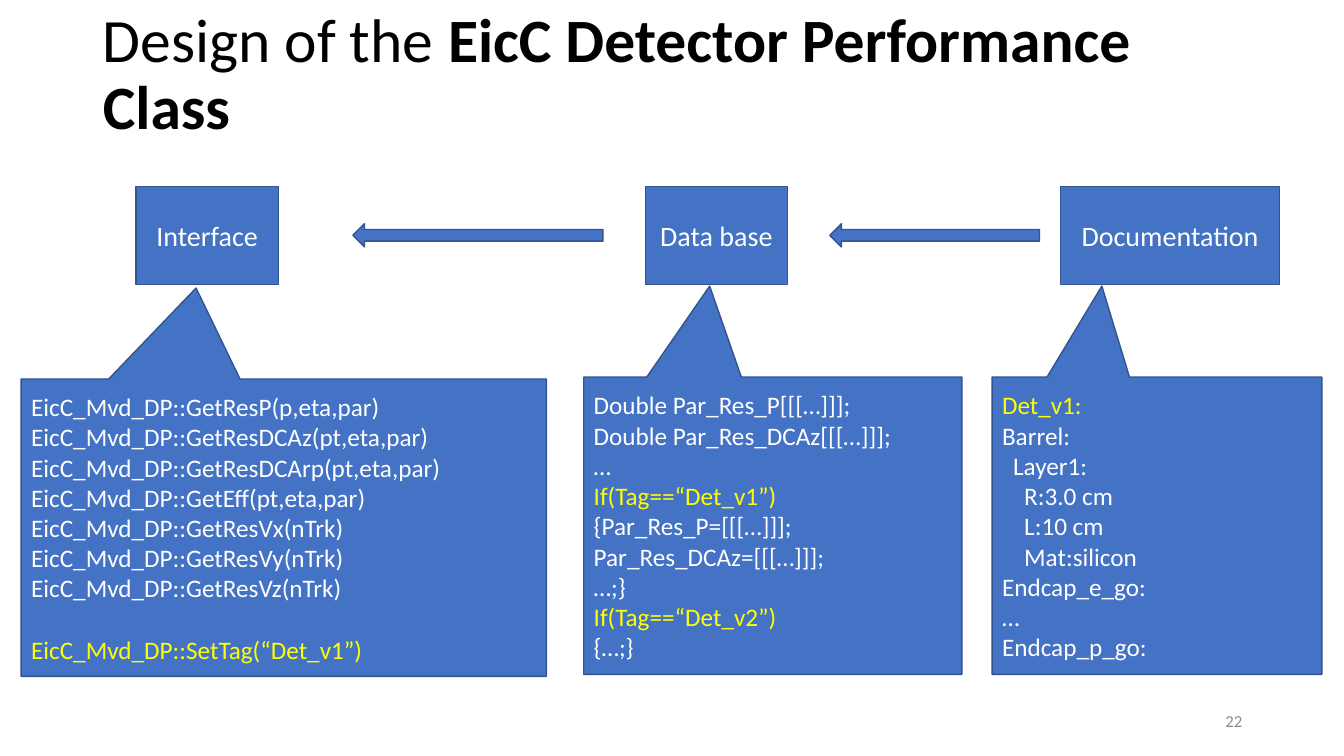
from pptx import Presentation
from pptx.dml.color import RGBColor
from pptx.enum.shapes import MSO_SHAPE
from pptx.enum.text import MSO_ANCHOR, MSO_AUTO_SIZE, PP_ALIGN
from pptx.util import Inches, Pt

BLUE = RGBColor(0x44, 0x72, 0xC4)
EDGE = RGBColor(0x32, 0x54, 0x91)
WHITE = RGBColor(0xFF, 0xFF, 0xFF)
YELLOW = RGBColor(0xFF, 0xFF, 0x00)
BLACK = RGBColor(0x00, 0x00, 0x00)
GRAY = RGBColor(0x8C, 0x8C, 0x8C)
FONT = "Calibri"
INDENT = 0.11

INTERFACE = [
    "EicC_Mvd_DP::GetResP(p,eta,par)",
    "EicC_Mvd_DP::GetResDCAz(pt,eta,par)",
    "EicC_Mvd_DP::GetResDCArp(pt,eta,par)",
    "EicC_Mvd_DP::GetEff(pt,eta,par)",
    "EicC_Mvd_DP::GetResVx(nTrk)",
    "EicC_Mvd_DP::GetResVy(nTrk)",
    "EicC_Mvd_DP::GetResVz(nTrk)",
    "EicC_Mvd_DP::SetTag(“Det_v1”)",
]
DATA_BASE = [
    "Double Par_Res_P[[[…]]];",
    "Double Par_Res_DCAz[[[…]]];",
    "…",
    "If(Tag==“Det_v1”)",
    "{Par_Res_P=[[[…]]];",
    "Par_Res_DCAz=[[[…]]];",
    "…;}",
    "If(Tag==“Det_v2”)",
    "{…;}",
]
DOCUMENTATION = [
    "Det_v1:",
    "Barrel:",
    "Layer1:",
    "R:3.0 cm",
    "L:10 cm",
    "Mat:silicon",
    "Endcap_e_go:",
    "…",
    "Endcap_p_go:",
]
LEVELS = {"Layer1:": 1, "R:3.0 cm": 2, "L:10 cm": 2, "Mat:silicon": 2}


def style_font(font, size, color):
    """Apply the slide font with a size and colour."""
    font.name, font.size = FONT, Pt(size)
    font.color.rgb = color


def add_block(s, kind, x, y, w, h):
    """Add a blue outlined shape without shadow."""
    sp = s.shapes.add_shape(kind, Inches(x), Inches(y), Inches(w), Inches(h))
    sp.shadow.inherit = False
    sp.fill.solid()
    sp.fill.fore_color.rgb = BLUE
    sp.line.color.rgb = EDGE
    sp.line.width = Pt(1)
    return sp


def add_title(s, x, y, w, h):
    """Place the title with its class name in bold."""
    sp = s.shapes.title
    sp.left, sp.top, sp.width, sp.height = map(Inches, (x, y, w, h))
    tf = sp.text_frame
    tf.auto_size = MSO_AUTO_SIZE.NONE
    tf.vertical_anchor = MSO_ANCHOR.MIDDLE
    p = tf.paragraphs[0]
    p.alignment = PP_ALIGN.LEFT
    p.line_spacing = 0.9
    style_font(p.font, 44, BLACK)
    p.add_run().text = "Design of the "
    r = p.add_run()
    r.text = "EicC Detector Performance Class"
    r.font.bold = True


def add_process(s, name, x, y, w, h):
    """Add a process box with a centred name."""
    tf = add_block(s, MSO_SHAPE.FLOWCHART_PROCESS, x, y, w, h).text_frame
    tf.vertical_anchor = MSO_ANCHOR.MIDDLE
    p = tf.paragraphs[0]
    p.text = name
    p.alignment = PP_ALIGN.CENTER
    style_font(p.font, 20, WHITE)


def add_callout(s, lines, x, y, w, h):
    """Add a code callout pointing up, with tag lines in yellow."""
    sp = add_block(s, MSO_SHAPE.RECTANGULAR_CALLOUT, x, y, w, h)
    sp.adjustments[0], sp.adjustments[1] = -0.167, -0.806
    tf = sp.text_frame
    tf.vertical_anchor = MSO_ANCHOR.MIDDLE
    for i, line in enumerate(lines):
        p = tf.add_paragraph() if i else tf.paragraphs[0]
        p.text = line
        p.alignment = PP_ALIGN.LEFT
        style_font(p.font, 18, YELLOW if "Det_v" in line else WHITE)
        if "SetTag" in line:
            p.space_before = Pt(22)
        if line in LEVELS:
            p._p.get_or_add_pPr().set("marL", str(Inches(INDENT * LEVELS[line])))


def add_slide_number(s, x, y, w, h):
    """Add the page number at the lower right."""
    tf = s.shapes.add_textbox(Inches(x), Inches(y), Inches(w), Inches(h)).text_frame
    tf.word_wrap = True
    tf.vertical_anchor = MSO_ANCHOR.MIDDLE
    p = tf.paragraphs[0]
    p.text = "22"
    p.alignment = PP_ALIGN.RIGHT
    style_font(p.font, 12, GRAY)


def main():
    """Build the slide and save it."""
    prs = Presentation()
    prs.slide_width, prs.slide_height = Inches(13.33), Inches(7.5)
    s = prs.slides.add_slide(prs.slide_layouts[5])
    add_title(s, 0.92, 0.03, 11.74, 1.45)
    for name, x, w in (("Interface", 1.35, 1.41), ("Data base", 6.4, 1.41),
                       ("Documentation", 10.52, 2.17)):
        add_process(s, name, x, 1.85, w, 0.97)
    for x, w in ((3.5, 2.48), (8.23, 2.08)):
        add_block(s, MSO_SHAPE.LEFT_ARROW, x, 2.22, w, 0.23)
    for lines, x, y, w in ((INTERFACE, 0.21, 3.76, 5.21),
                           (DATA_BASE, 5.79, 3.74, 3.75),
                           (DOCUMENTATION, 9.84, 3.74, 3.27)):
        add_callout(s, lines, x, y, w, 2.95)
    add_slide_number(s, 9.42, 6.95, 3, 0.4)
    prs.save("out.pptx")


if __name__ == "__main__":
    main()
